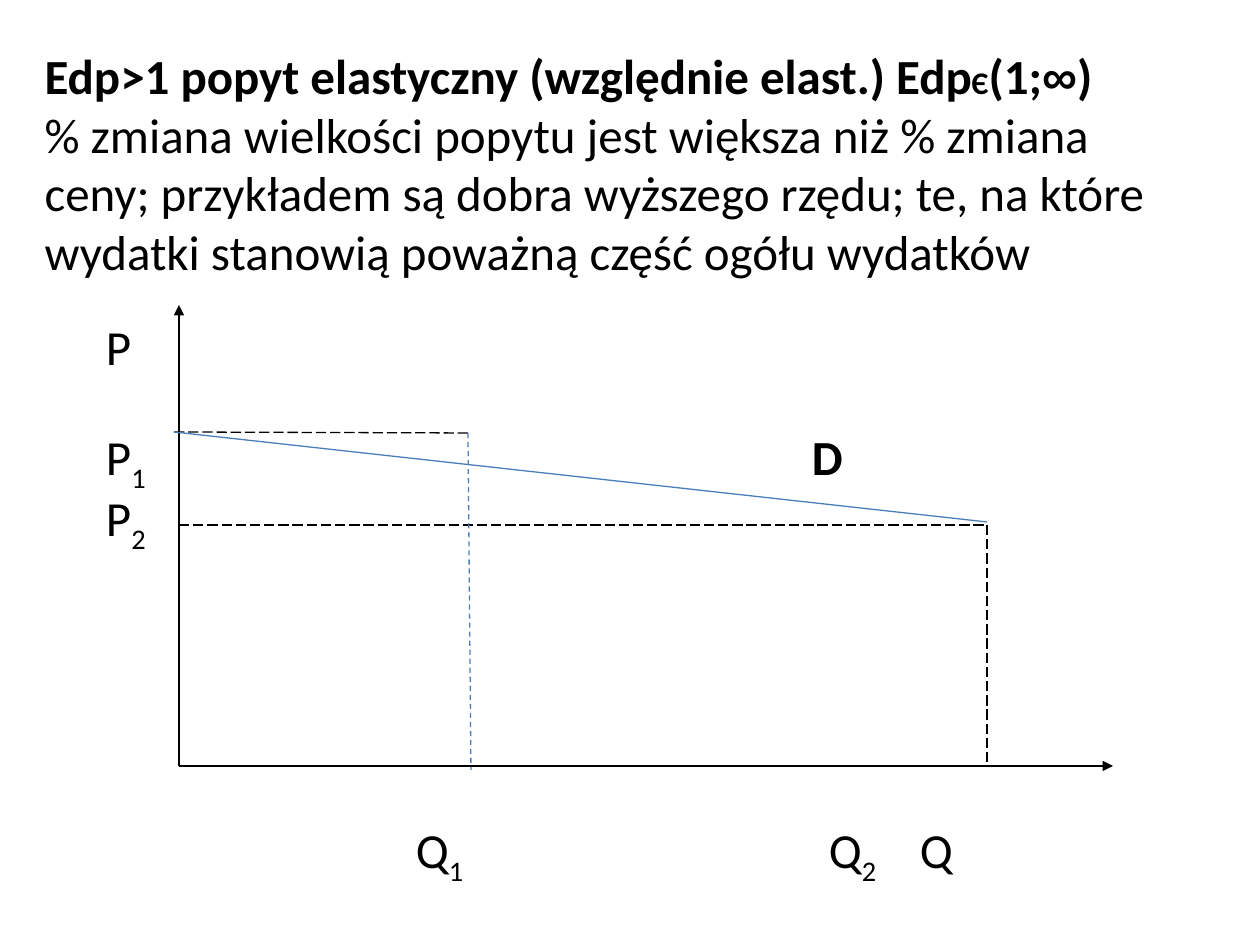
from pptx import Presentation
from pptx.dml.color import RGBColor
from pptx.enum.dml import MSO_LINE
from pptx.enum.shapes import MSO_CONNECTOR
from pptx.enum.text import MSO_ANCHOR, MSO_AUTO_SIZE, PP_ALIGN
from pptx.oxml.ns import qn
from pptx.util import Emu, Pt
from lxml import etree

BLACK = RGBColor(0x00, 0x00, 0x00)
BLUE = RGBColor(0x4A, 0x7E, 0xBB)
STRAIGHT = MSO_CONNECTOR.STRAIGHT
LONG_DASH = MSO_LINE.LONG_DASH
DASH = MSO_LINE.DASH
MIDDLE = MSO_ANCHOR.MIDDLE
NO_AUTOFIT = MSO_AUTO_SIZE.NONE
LEFT = PP_ALIGN.LEFT
TITLE_ONLY = 5
SCALE = 914400 / 126


def px(length):
    return Emu(round(length * SCALE))


class SlideBuilder:
    font_name = "Calibri"
    font_size = Pt(28)
    line_width = Pt(0.75)

    def __init__(self, deck):
        self.slide = deck.slides.add_slide(deck.slide_layouts[TITLE_ONLY])

    def style(self, para, bold=False):
        para.alignment = LEFT
        para.font.name = self.font_name
        para.font.size = self.font_size
        para.font.bold = bold
        para.font.color.rgb = BLACK

    def title(self, left, top, width, height, heading, body):
        box = self.slide.shapes.title
        box.left, box.top, box.width, box.height = map(px, (left, top, width, height))
        frame = box.text_frame
        frame.word_wrap = True
        frame.auto_size = NO_AUTOFIT
        frame.vertical_anchor = MIDDLE
        first = frame.paragraphs[0]
        self.style(first, bold=True)
        for text, size, name in heading:
            span = first.add_run()
            span.text = text
            if size:
                span.font.size = size
            if name:
                span.font.name = name
        second = frame.add_paragraph()
        second.text = body
        second.space_before = Pt(0)
        self.style(second)

    def label(self, left, top, text, subscript="", bold=False):
        box = self.slide.shapes.add_textbox(px(left), px(top), px(60), px(60))
        frame = box.text_frame
        frame.word_wrap = True
        frame.margin_left = frame.margin_right = 0
        frame.margin_top = frame.margin_bottom = 0
        para = frame.paragraphs[0]
        para.add_run().text = text
        if subscript:
            span = para.add_run()
            span.text = subscript
            span.font._element.set("baseline", "-25000")
        self.style(para, bold)

    def line(self, start, end, color=BLACK, dash=None, arrow=False):
        connector = self.slide.shapes.add_connector(
            STRAIGHT, *map(px, (*start, *end)))
        connector.line.color.rgb = color
        connector.line.width = self.line_width
        if dash:
            connector.line.dash_style = dash
        if arrow:
            outline = connector.line._get_or_add_ln()
            etree.SubElement(outline, qn("a:tailEnd"), type="triangle")
        etree.SubElement(connector._element.spPr, qn("a:effectLst"))


def main():
    deck = Presentation()
    deck.slide_width, deck.slide_height = px(1260), px(945)
    page = SlideBuilder(deck)

    page.title(
        32, 84, 1176, 158,
        [("Edp>1 popyt elastyczny (względnie elast.) Edp", None, None),
         ("Є", Pt(18), None),
         ("(1;", None, None),
         ("∞", None, "Arial"),
         (")", None, None)],
        "% zmiana wielkości popytu jest większa niż % zmiana ceny; "
        "przykładem są dobra wyższego rzędu; te, na które wydatki "
        "stanowią poważną część ogółu wydatków")

    price_x, quantity_y = 106, 820
    page.label(price_x, 317, "P")
    page.label(price_x, 427, "P", "1")
    page.label(price_x, 488, "P", "2")
    page.label(812, 427, "D", bold=True)
    page.label(416, quantity_y, "Q", "1")
    page.label(829, quantity_y, "Q", "2")
    page.label(920, quantity_y, "Q")

    origin = origin_x, origin_y = 179, 766
    demand_start = (174, 432)
    first_x, first_y = 468, 433
    second_x, second_y = 987, 525
    page.line(origin, (origin_x, 305), arrow=True)
    page.line(origin, (1113, origin_y), arrow=True)
    page.line(demand_start, (first_x, first_y), dash=LONG_DASH)
    page.line((origin_x, second_y), (second_x, second_y), dash=LONG_DASH)
    page.line((second_x, second_y), (second_x, origin_y), dash=LONG_DASH)
    page.line(demand_start, (second_x, 522), BLUE)
    page.line((first_x, first_y), (471, 770), BLUE, DASH)

    deck.save("out.pptx")


if __name__ == "__main__":
    main()
